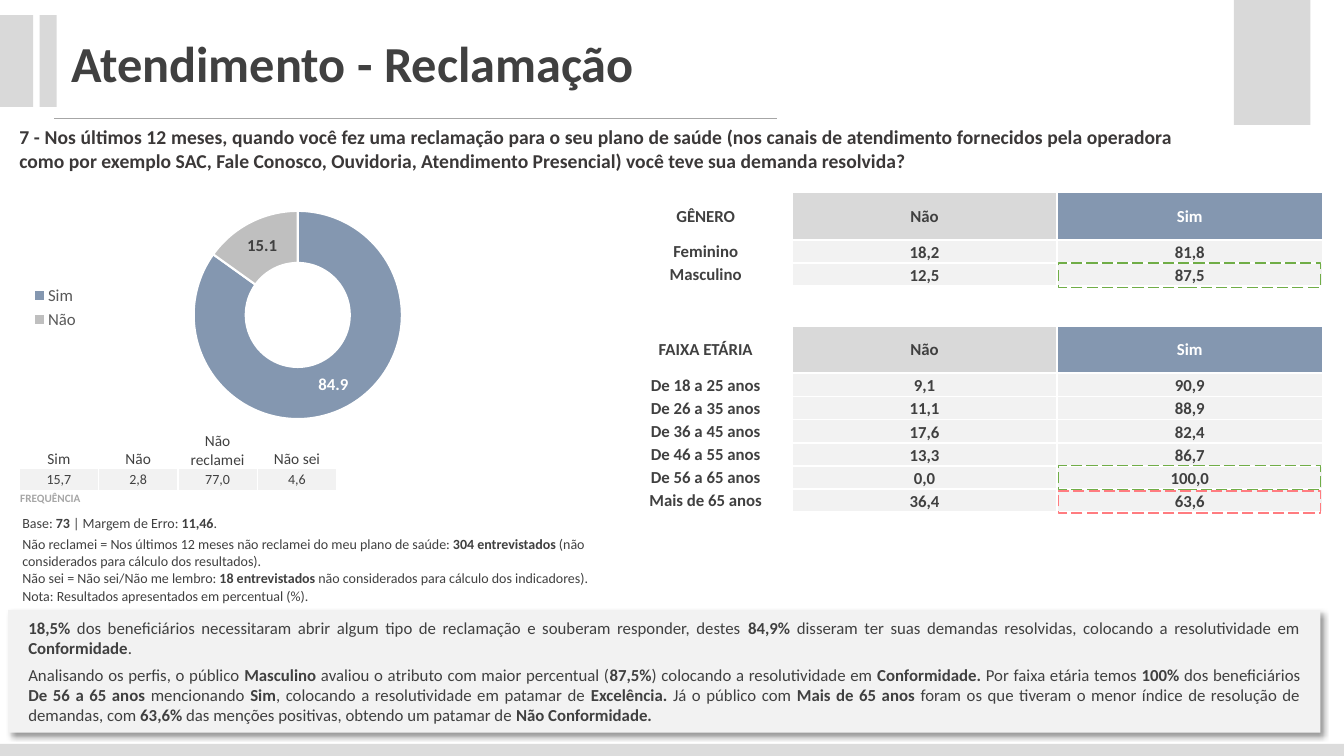
import lxml.etree
import pptx
import pptx.chart.data
import pptx.dml.color
import pptx.enum.chart
import pptx.enum.dml
import pptx.enum.shapes
import pptx.enum.text
import pptx.oxml.ns
import pptx.util

Pt = pptx.util.Pt
Align = pptx.enum.text.PP_ALIGN
Anchor = pptx.enum.text.MSO_ANCHOR
DARK, WHITE, PALE, GREY, BLUE = "404040", "FFFFFF", "F2F2F2", "D9D9D9", "8497B0"
GREEN, RED = "70AD47", "FF7C80"

TITLE = "Atendimento - Reclamação"
ASK = ("7 - Nos últimos 12 meses, quando você fez uma reclamação para o seu plano de saúde "
       "(nos canais de atendimento fornecidos pela operadora como por exemplo SAC, Fale Conosco, "
       "Ouvidoria, Atendimento Presencial) você teve sua demanda resolvida?")
DECOR = [(0, 531.4, 960, 8.6, "DCDCDC"), (-0.7, 10.8, 24.5, 65.5, GREY),
         (28.4, 10.8, 12.2, 65.5, GREY), (881.3, 0, 54.7, 89.3, GREY)]
SHARE = [("Sim", 84.9, BLUE, WHITE), ("Não", 15.1, "BFBFBF", DARK)]
GROUPS = [
    ("GÊNERO", "Não", "Sim"),
    ("Feminino", "18,2", "81,8"),
    ("Masculino", "12,5", "87,5"),
    ("", "", ""),
    ("FAIXA ETÁRIA", "Não", "Sim"),
    ("De 18 a 25 anos", "9,1", "90,9"),
    ("De 26 a 35 anos", "11,1", "88,9"),
    ("De 36 a 45 anos", "17,6", "82,4"),
    ("De 46 a 55 anos", "13,3", "86,7"),
    ("De 56 a 65 anos", "0,0", "100,0"),
    ("Mais de 65 anos", "36,4", "63,6"),
]
MARKS = [(187.9, 17.3, GREEN), (332.6, 17.3, GREEN), (350.6, 15.8, RED)]
FREQ = [("Sim", "Não", "Não reclamei", "Não sei"), ("15,7", "2,8", "77,0", "4,6")]
NOTES = [
    ["Base: **73** | Margem de Erro: **11,46**."],
    ["Não reclamei = Nos últimos 12 meses não reclamei do meu plano de saúde: "
     "**304 entrevistados **(não considerados para cálculo dos resultados).",
     "Não sei = Não sei/Não me lembro: **18 entrevistados** não considerados para cálculo dos indicadores)."],
    ["Nota: Resultados apresentados em percentual (%)."],
]
FINDS = [
    "**18,5%** dos beneficiários necessitaram abrir algum tipo de reclamação e souberam responder, "
    "destes **84,9%** disseram ter suas demandas resolvidas, colocando a resolutividade em **Conformidade**.",
    "Analisando os perfis, o público **Masculino** avaliou o atributo com maior percentual (**87,5%**) "
    "colocando a resolutividade em** Conformidade. **Por faixa etária temos **100% **dos beneficiários "
    "**De 56 a 65 anos **mencionando **Sim**, colocando a resolutividade em patamar de **Excelência. **"
    "Já o público com **Mais de 65 anos **foram os que tiveram o menor índice de resolução de demandas, "
    "com **63,6%** das menções positivas, obtendo um patamar de **Não Conformidade.**",
]


def tint(code):
    return pptx.dml.color.RGBColor.from_string(code)


def style(font, size, color=DARK, bold=False):
    font.name, font.size, font.bold = "Calibri", Pt(size), bold
    font.color.rgb = tint(color)


def write(frame, lines, size, color=DARK, bold=False, align=Align.LEFT, gap=0):
    for i, line in enumerate(lines):
        para = frame.add_paragraph() if i else frame.paragraphs[0]
        para.alignment = align
        if i and gap:
            para.space_before = Pt(gap)
        for j, part in enumerate(line.split("**")):
            if part:
                run = para.add_run()
                run.text = part
                style(run.font, size, color, bold or j % 2 == 1)


def inset(item, left, top, right, bottom):
    item.margin_left, item.margin_top = Pt(left), Pt(top)
    item.margin_right, item.margin_bottom = Pt(right), Pt(bottom)


def block(x, y, w, h, fill=None, line=None):
    box = slide.shapes.add_shape(pptx.enum.shapes.MSO_SHAPE.RECTANGLE, Pt(x), Pt(y), Pt(w), Pt(h))
    box.shadow.inherit = False
    if fill:
        box.fill.solid()
        box.fill.fore_color.rgb = tint(fill)
    else:
        box.fill.background()
    if line:
        box.line.color.rgb = tint(line)
        box.line.width = Pt(1)
        box.line.dash_style = pptx.enum.dml.MSO_LINE.LONG_DASH
    else:
        box.line.fill.background()
    return box


def label(x, y, w, h, text, size, color, align):
    frame = slide.shapes.add_textbox(Pt(x), Pt(y), Pt(w), Pt(h)).text_frame
    frame.word_wrap = True
    write(frame, [text], size, color, True, align)
    return frame


def sub(node, tag, **attrs):
    return lxml.etree.SubElement(node, pptx.oxml.ns.qn(tag), attrs)


def grid(x, y, cols, rows):
    frame = slide.shapes.add_table(len(rows), len(cols), Pt(x), Pt(y), Pt(sum(cols)), Pt(sum(rows)))
    table = frame.table
    table.first_row = table.horz_banding = False
    for col, w in zip(table.columns, cols):
        col.width = Pt(w)
    for row, h in zip(table.rows, rows):
        row.height = Pt(h)
    for cell in table.iter_cells():
        inset(cell, 0.7, 0.7, 0.7, 0)
        sub(cell.text_frame.paragraphs[0]._p, "a:endParaRPr", sz="800")
    return table


def fit(cell, lines, size, fill=None, color=DARK, bold=False, align=Align.CENTER,
        anchor=Anchor.MIDDLE, edge=1.5):
    cell.vertical_anchor = anchor
    write(cell.text_frame, lines, size, color, bold, align)
    prop = cell._tc.get_or_add_tcPr()
    for side in ("a:lnL", "a:lnR", "a:lnT", "a:lnB"):
        line = sub(prop, side, w=str(Pt(edge)))
        if edge:
            sub(sub(line, "a:solidFill"), "a:srgbClr", val=WHITE)
        else:
            sub(line, "a:noFill")
    if fill:
        cell.fill.solid()
        cell.fill.fore_color.rgb = tint(fill)
    else:
        cell.fill.background()


deck = pptx.Presentation()
deck.slide_width, deck.slide_height = Pt(960), Pt(540)
slide = deck.slides.add_slide(deck.slide_layouts[6])

for x, y, w, h, fill in DECOR:
    block(x, y, w, h, fill)
rule = slide.shapes.add_connector(pptx.enum.shapes.MSO_CONNECTOR.STRAIGHT,
                                  Pt(38.9), Pt(84.4), Pt(555.1), Pt(84.4))
rule.line.color.rgb = tint("A6A6A6")
rule.line.width = Pt(0.5)
sub(rule._element.spPr, "a:effectLst")
label(43.9, 19.4, 453.6, 51, TITLE, 36, DARK, Align.LEFT)
inset(label(5.8, 85, 840.2, 42, ASK, 14, "3B3838", Align.JUSTIFY), 8, 4.3, 8, 4.3)

highs = [33.7 if r[1] == "Não" else 16.5 if r[0] else 28.8 for r in GROUPS]
table = grid(442.6, 137.5, [123, 189.5, 189.5], highs)
for i, row in enumerate(GROUPS):
    head = row[1] == "Não"
    for j, text in enumerate(row):
        fill = None if not j or not text else (GREY, BLUE)[j - 1] if head else PALE
        fit(table.cell(i, j), [text], 12, fill, WHITE if fill == BLUE else DARK, True,
            anchor=Anchor.BOTTOM if j and not head else Anchor.MIDDLE)

table = grid(15.3, 367.2, [226, 226], [15, 37.5, 15])
for i, lines in enumerate(NOTES):
    if i < 2:
        table.cell(i, 0).merge(table.cell(i, 1))
    fit(table.cell(i, 0), lines, 10, align=Align.LEFT, anchor=Anchor.TOP, edge=0)
fit(table.cell(2, 1), [], 10, edge=0)

table = grid(13.7, 307.4, [56.7] * 4, [27.5, 15.4, 11])
for j, (name, value) in enumerate(zip(*FREQ)):
    fit(table.cell(0, j), [name], 11, anchor=Anchor.BOTTOM, edge=1)
    fit(table.cell(1, j), [value], 10, PALE, edge=1)
table.cell(2, 0).merge(table.cell(2, 2))
fit(table.cell(2, 0), ["FREQUÊNCIA"], 8, None, "A6A6A6", True, Align.LEFT, Anchor.TOP, 1)
fit(table.cell(2, 3), [], 8, edge=1)

panel = block(5.8, 435.6, 937.4, 87.8, PALE)
glow = sub(panel._element.spPr.find(pptx.oxml.ns.qn("a:effectLst")), "a:outerShdw",
           blurRad=str(Pt(4)), dist=str(Pt(3)), dir="2700000", algn="tl", rotWithShape="0")
sub(sub(glow, "a:srgbClr", val="000000"), "a:alpha", val="40000")
frame = panel.text_frame
frame.word_wrap = True
frame.vertical_anchor = Anchor.MIDDLE
inset(frame, 14.4, 2.9, 14.4, 2.9)
write(frame, FINDS, 12, align=Align.JUSTIFY, gap=5)

data = pptx.chart.data.CategoryChartData()
data.categories = [s[0] for s in SHARE]
data.add_series("Series 1", [s[1] for s in SHARE])
chart = slide.shapes.add_chart(pptx.enum.chart.XL_CHART_TYPE.DOUGHNUT, Pt(14.4), Pt(128.9),
                               Pt(336.2), Pt(181.4), data).chart
style(chart.font, 10, "000000")
chart.has_title = False
chart.has_legend = True
chart.legend.position = pptx.enum.chart.XL_LEGEND_POSITION.LEFT
chart.legend.include_in_layout = False
style(chart.legend.font, 12, "595959")
plot = chart.plots[0]
plot.vary_by_categories = True
plot.has_data_labels = True
tags = plot.series[0].data_labels
tags.show_value, tags.show_percentage = True, False
tags.number_format, tags.number_format_is_linked = "0.0", False
style(tags.font, 12, WHITE, True)
for i, (name, value, fill, color) in enumerate(SHARE):
    point = plot.series[0].points[i]
    point.format.fill.solid()
    point.format.fill.fore_color.rgb = tint(fill)
    point.format.line.color.rgb = tint(WHITE)
    point.format.line.width = Pt(1.5)
    if color != WHITE:
        style(point.data_label.font, 12, color, True)
area = chart._chartSpace.chart.plotArea
for old in area.findall(pptx.oxml.ns.qn("c:layout")):
    area.remove(old)
place = sub(area, "c:layout")
area.insert(0, place)
spot = sub(place, "c:manualLayout")
for tag, val in [("layoutTarget", "inner"), ("xMode", "edge"), ("yMode", "edge"),
                 ("x", "0.36"), ("y", "0.12"), ("w", "0.46"), ("h", "0.82")]:
    sub(spot, "c:" + tag, val=val)

for y, h, color in MARKS:
    block(756, y, 187.2, h, line=color)

deck.save("out.pptx")
